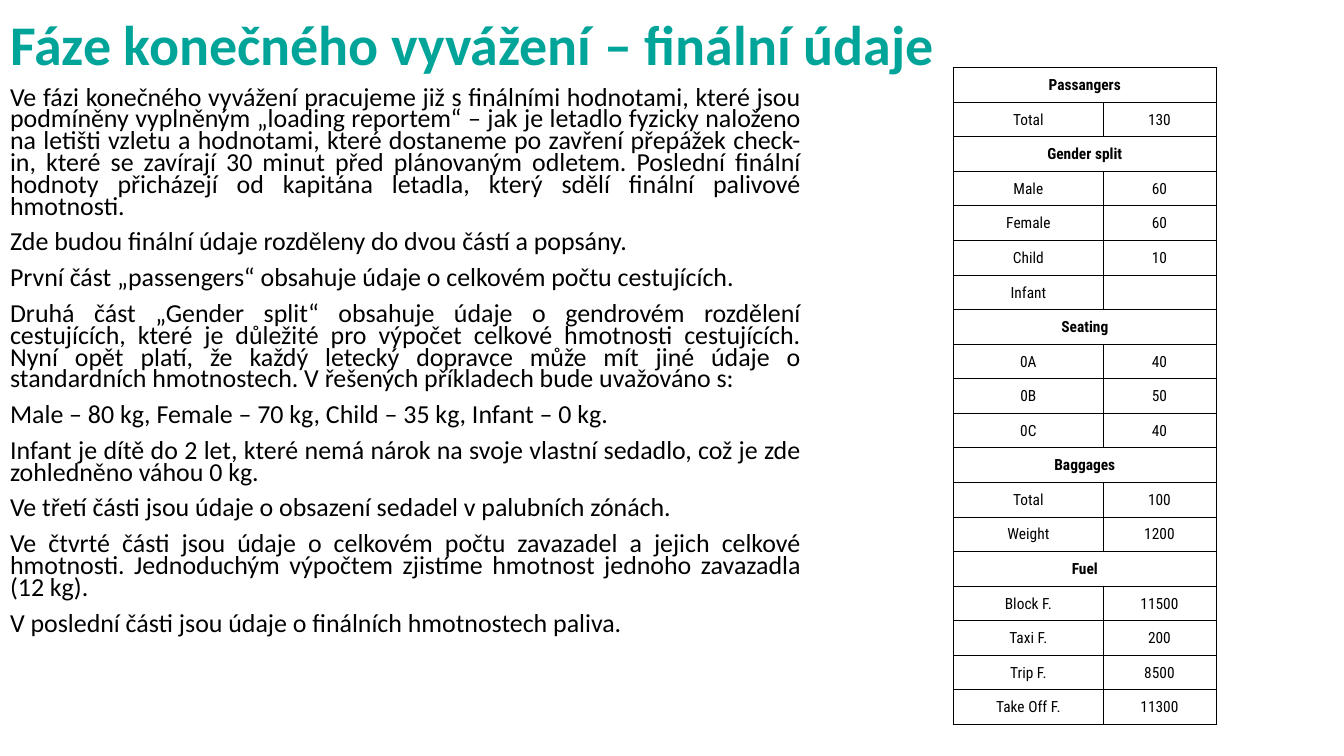
from lxml import etree
from pptx import Presentation
from pptx.dml.color import RGBColor
from pptx.enum.text import MSO_ANCHOR, MSO_AUTO_SIZE, PP_ALIGN
from pptx.oxml.ns import qn
from pptx.util import Inches, Pt

LEFT, CENTER, JUSTIFY = PP_ALIGN.LEFT, PP_ALIGN.CENTER, PP_ALIGN.JUSTIFY
MIDDLE, BOTTOM = MSO_ANCHOR.MIDDLE, MSO_ANCHOR.BOTTOM
NO_AUTOFIT = MSO_AUTO_SIZE.NONE
TITLE_AND_CONTENT = 1
BLACK, TEAL = "000000", "00A499"

TITLE = "Fáze konečného vyvážení – finální údaje"
PARAGRAPHS = [
    "Ve fázi konečného vyvážení pracujeme již s finálními hodnotami, které jsou "
    "podmíněny vyplněným „loading reportem“ – jak je letadlo fyzicky naloženo na "
    "letišti vzletu a hodnotami, které dostaneme po zavření přepážek check-in, "
    "které se zavírají 30 minut před plánovaným odletem. Poslední finální hodnoty "
    "přicházejí od kapitána letadla, který sdělí finální palivové hmotnosti.",
    "Zde budou finální údaje rozděleny do dvou částí a popsány.",
    "První část „passengers“ obsahuje údaje o celkovém počtu cestujících.",
    "Druhá část „Gender split“ obsahuje údaje o gendrovém rozdělení cestujících, "
    "které je důležité pro výpočet celkové hmotnosti cestujících. Nyní opět platí, "
    "že každý letecký dopravce může mít jiné údaje o standardních hmotnostech. "
    "V řešených příkladech bude uvažováno s:",
    "Male – 80 kg, Female – 70 kg, Child – 35 kg, Infant – 0 kg.",
    "Infant je dítě do 2 let, které nemá nárok na svoje vlastní sedadlo, což je zde "
    "zohledněno váhou 0 kg.",
    "Ve třetí části jsou údaje o obsazení sedadel v palubních zónách.",
    "Ve čtvrté části jsou údaje o celkovém počtu zavazadel a jejich celkové "
    "hmotnosti. Jednoduchým výpočtem zjistíme hmotnost jednoho zavazadla (12 kg).",
    "V poslední části jsou údaje o finálních hmotnostech paliva.",
]
SECTIONS = {
    "Passangers": [("Total", "130")],
    "Gender split": [("Male", "60"), ("Female", "60"), ("Child", "10"), ("Infant", "")],
    "Seating": [("0A", "40"), ("0B", "50"), ("0C", "40")],
    "Baggages": [("Total", "100"), ("Weight", "1200")],
    "Fuel": [("Block F.", "11500"), ("Taxi F.", "200"), ("Trip F.", "8500"),
             ("Take Off F.", "11300")],
}


def rgb(color):
    """Turn a hex string into a colour."""
    return RGBColor.from_string(color)


def write(p, text, size=18.5, font="Calibri", color=BLACK, bold=False,
          align=LEFT, line=1.0, before=0):
    """Add a formatted run to a paragraph."""
    p.alignment, p.line_spacing, p.space_before = align, line, Pt(before)
    r = p.add_run()
    r.text = text
    r.font.size, r.font.name, r.font.bold = Pt(size), font, bold
    r.font.color.rgb = rgb(color)


def place(sp, box):
    """Move a placeholder to a box given in inches and return its text frame."""
    sp.left, sp.top, sp.width, sp.height = map(Inches, box)
    tf = sp.text_frame
    tf.word_wrap, tf.auto_size = True, NO_AUTOFIT
    return tf


def add_title(s, box):
    """Fill the title placeholder."""
    tf = place(s.shapes.title, box)
    tf.vertical_anchor = BOTTOM
    write(tf.paragraphs[0], TITLE, size=40, color=TEAL, bold=True, line=0.9)


def add_body(s, box):
    """Fill the body placeholder with justified paragraphs without bullets."""
    tf = place(s.placeholders[1], box)
    for i, text in enumerate(PARAGRAPHS):
        p = tf.add_paragraph() if i else tf.paragraphs[0]
        write(p, text, align=JUSTIFY, line=0.7, before=10)
        pPr = p._p.get_or_add_pPr()
        pPr.set("marL", "0")
        pPr.set("indent", "0")
        etree.SubElement(pPr, qn("a:buNone"))


def format_cell(cell):
    """Give a cell thin black borders, narrow margins and no fill."""
    tcPr = cell._tc.get_or_add_tcPr()
    for side in "LRTB":
        ln = etree.SubElement(tcPr, qn(f"a:ln{side}"), w=str(Pt(0.5)))
        fill = etree.SubElement(ln, qn("a:solidFill"))
        etree.SubElement(fill, qn("a:srgbClr"), val=BLACK)
    cell.fill.background()
    cell.margin_left = cell.margin_right = cell.margin_top = Inches(0.01)
    cell.margin_bottom = 0
    cell.vertical_anchor = MIDDLE


def add_load_table(s, box, label_width):
    """Draw the load data with a merged heading row above each section."""
    rows = []
    for heading, entries in SECTIONS.items():
        rows += [(heading,), *entries]
    left, top, width, height = map(Inches, box)
    table = s.shapes.add_table(len(rows), 2, left, top, width, height).table
    table.first_row = table.horz_banding = False
    table.columns[0].width = Inches(label_width)
    table.columns[1].width = width - Inches(label_width)
    for i, row in enumerate(rows):
        table.rows[i].height = height // len(rows)
        is_heading = len(row) == 1
        for j in range(2):
            format_cell(table.cell(i, j))
        if is_heading:
            table.cell(i, 0).merge(table.cell(i, 1))
        for j, text in enumerate(row):
            if text:
                write(table.cell(i, j).text_frame.paragraphs[0], text, size=11,
                      font="Roboto Condensed", bold=is_heading, align=CENTER)


def main():
    """Build the slide and save it."""
    prs = Presentation()
    prs.slide_width, prs.slide_height = Inches(13.33), Inches(7.5)
    s = prs.slides.add_slide(prs.slide_layouts[TITLE_AND_CONTENT])
    add_title(s, (0, 0.03, 12.91, 0.79))
    add_body(s, (0, 0.83, 8.04, 6.64))
    add_load_table(s, (9.46, 0.67, 2.6, 6.52), 1.48)
    prs.save("out.pptx")


if __name__ == "__main__":
    main()
